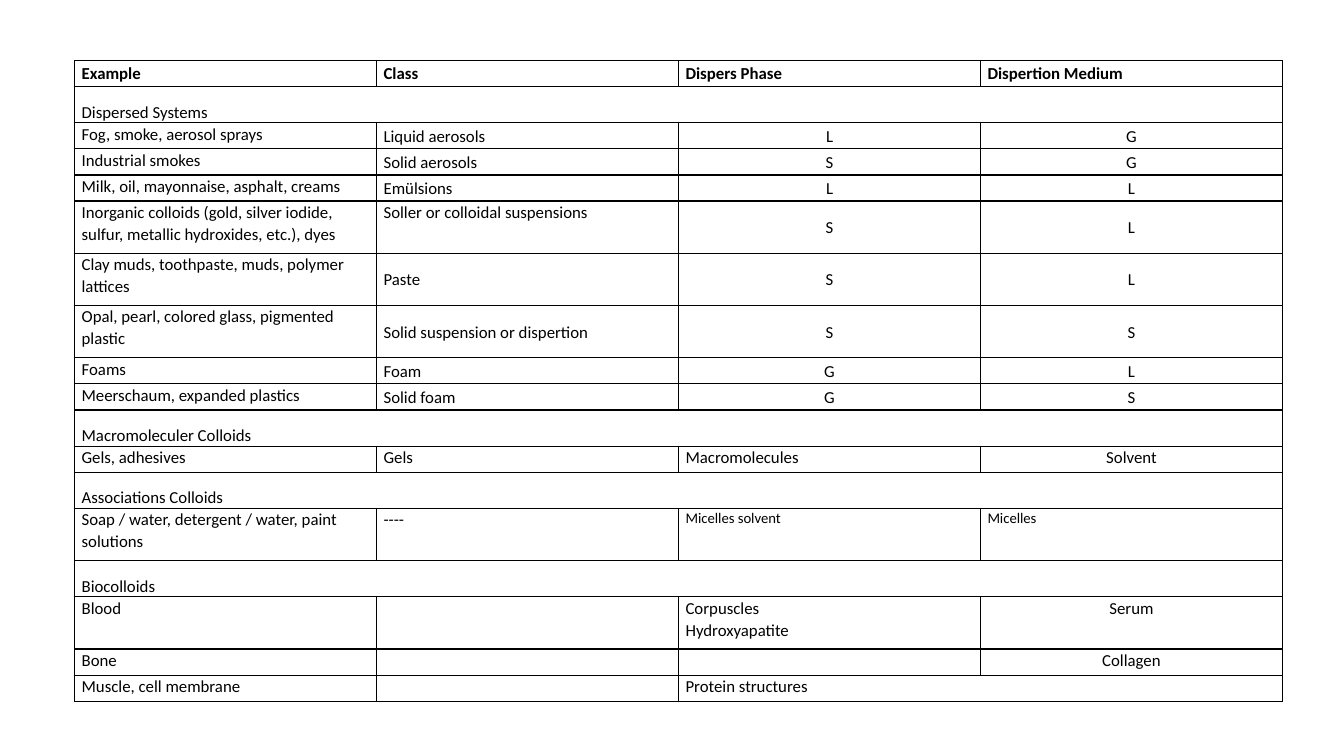
"""Build a slide with a table of colloid classes and examples."""
from lxml import etree
from pptx import Presentation
from pptx.dml.color import RGBColor
from pptx.enum import text
from pptx.oxml import ns
from pptx.util import Inches, Pt

HEAD = (0.26, "mmmm", "llll")
SECTION = (0.36, "bbbb", "llll")
LINE = (0.26, "tmmm", "llcc")
DOUBLE = (0.52, "tmmm", "llcc")
ROWS = [
    (HEAD, ["Example", "Class", "Dispers Phase", "Dispertion Medium"]),
    (SECTION, ["Dispersed Systems"]),
    (LINE, ["Fog, smoke, aerosol sprays", "Liquid aerosols", "L", "G"]),
    (LINE, ["Industrial smokes", "Solid aerosols", "S", "G"]),
    (LINE, ["Milk, oil, mayonnaise, asphalt, creams", "Emülsions", "L", "L"]),
    ((0.52, "ttmm", "llcc"),
     ["Inorganic colloids (gold, silver iodide, sulfur, metallic hydroxides, etc.), dyes",
      "Soller or colloidal suspensions", "S", "L"]),
    (DOUBLE, ["Clay muds, toothpaste, muds, polymer lattices", "Paste", "S", "L"]),
    (DOUBLE, ["Opal, pearl, colored glass, pigmented plastic",
              "Solid suspension or dispertion", "S", "S"]),
    (LINE, ["Foams", "Foam", "G", "L"]),
    (LINE, ["Meerschaum, expanded plastics", "Solid foam", "G", "S"]),
    (SECTION, ["Macromoleculer Colloids"]),
    ((0.26, "tttt", "lljc"), ["Gels, adhesives", "Gels", "Macromolecules", "Solvent"]),
    (SECTION, ["Associations Colloids"]),
    ((0.52, "tttt", "llll"), ["Soap / water, detergent / water, paint solutions", "----",
                             "Micelles solvent", "Micelles"]),
    (SECTION, ["Biocolloids"]),
    ((0.52, "tttt", "lllc"), ["Blood", "", "Corpuscles\nHydroxyapatite", "Serum"]),
    ((0.26, "tttt", "lllc"), ["Bone", "", "", "Collagen"]),
    ((0.26, "tttt", "llll"), ["Muscle, cell membrane", "", "Protein structures"]),
]
SMALL = {"Micelles solvent", "Micelles"}
LEFT, TOP, WIDTH, HEIGHT = 0.74, 0.6, 11.98, 6.36
COLUMNS = 4
BLACK = "000000"
ANCHORS = {"t": text.MSO_ANCHOR.TOP, "m": text.MSO_ANCHOR.MIDDLE, "b": text.MSO_ANCHOR.BOTTOM}
ALIGNS = {"l": text.PP_ALIGN.LEFT, "c": text.PP_ALIGN.CENTER, "j": text.PP_ALIGN.JUSTIFY}
MARGINS = {"margin_left": Inches(0.07), "margin_right": Inches(0.07),
           "margin_top": 0, "margin_bottom": 0}


def color(value):
    return RGBColor.from_string(value)


def apply(target, values):
    for name, value in values.items():
        setattr(target, name, value)


def add_borders(cell):
    properties = cell._tc.get_or_add_tcPr()
    for position, side in enumerate(("lnL", "lnR", "lnT", "lnB")):
        line = etree.Element(ns.qn(f"a:{side}"), w=str(Pt(1)))
        fill = etree.SubElement(line, ns.qn("a:solidFill"))
        etree.SubElement(fill, ns.qn("a:srgbClr"), val=BLACK)
        properties.insert(position, line)


def fill_cell(cell, content, anchor, align, style):
    apply(cell, {**MARGINS, "vertical_anchor": ANCHORS[anchor]})
    cell.fill.background()
    add_borders(cell)
    small = content in SMALL
    size = Pt(10.5 if small else 12)
    frame = cell.text_frame
    for number, words in enumerate(content.split("\n")):
        para = frame.add_paragraph() if number else frame.paragraphs[0]
        apply(para, {"alignment": ALIGNS[align],
                     "line_spacing": 1.5 if style == SECTION else 1.07,
                     "space_after": Pt(8 if small else 0)})
        if words:
            span = para.add_run()
            span.text = words
            apply(span.font, {"name": "Calibri", "size": size, "bold": style == HEAD})
            span.font.color.rgb = color(BLACK)
        else:
            para._p.get_or_add_endParaRPr().set("sz", str(int(size.pt * 100)))


def main():
    deck = Presentation()
    apply(deck, {"slide_width": Inches(13.33), "slide_height": Inches(7.5)})
    page = deck.slides.add_slide(deck.slide_layouts[6])
    box = page.shapes.add_table(len(ROWS), COLUMNS, Inches(LEFT), Inches(TOP),
                                Inches(WIDTH), Inches(HEIGHT))
    table = box.table
    apply(table, {"first_row": False, "horz_banding": False})
    for column in table.columns:
        column.width = Inches(WIDTH / COLUMNS)
    scale = HEIGHT / sum(style[0] for style, _ in ROWS)
    for row, (style, contents) in enumerate(ROWS):
        height, anchors, aligns = style
        table.rows[row].height = Inches(height * scale)
        padded = contents + [""] * (COLUMNS - len(contents))
        for column, details in enumerate(zip(padded, anchors, aligns)):
            fill_cell(table.cell(row, column), *details, style)
        if len(contents) < COLUMNS:
            table.cell(row, len(contents) - 1).merge(table.cell(row, COLUMNS - 1))
    deck.save("out.pptx")


if __name__ == "__main__":
    main()
